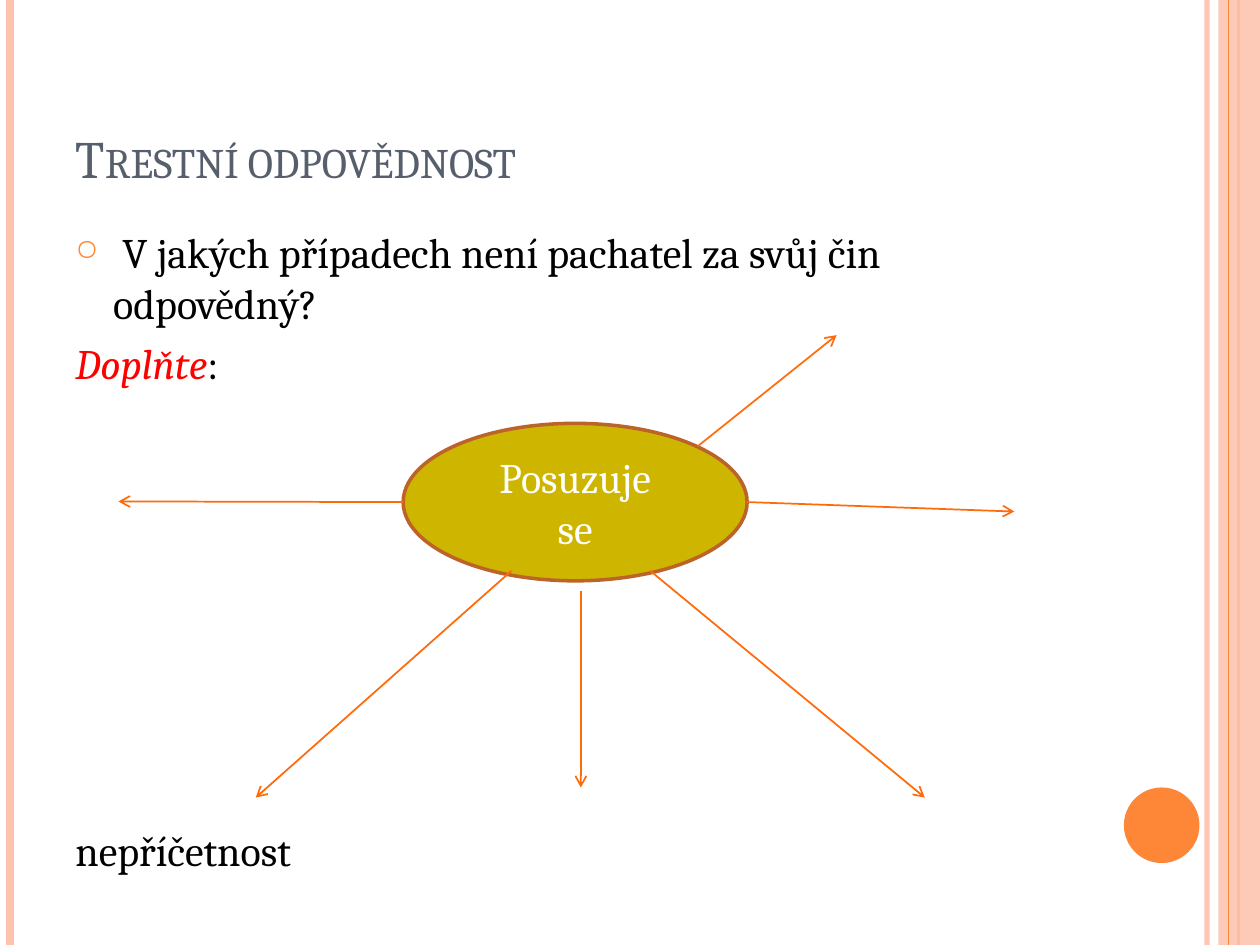
from lxml import etree
from pptx import Presentation
from pptx import util as u
from pptx.dml.color import RGBColor
from pptx.enum import shapes, text
from pptx.oxml import ns

FONT = "Cambria"
PEACH = RGBColor(0xFE, 0xC3, 0xAE)
ORANGE = RGBColor(0xFE, 0x86, 0x37)
ARROW = RGBColor(0xFF, 0x6B, 0x0A)
SLATE = RGBColor(0x57, 0x5F, 0x6D)
OLIVE = RGBColor(0xCE, 0xB5, 0x00)
RUST = RGBColor(0xBC, 0x63, 0x29)
RED = RGBColor(0xFF, 0, 0)
BLACK = RGBColor(0, 0, 0)
WHITE = RGBColor(0xFF, 0xFF, 0xFF)


def assign(target, values):
    """Set each attribute of the target from a dict."""
    for name, value in values.items():
        setattr(target, name, value)


def add_child(parent, tag, **attributes):
    """Append a DrawingML element with the given attributes."""
    return etree.SubElement(parent, ns.qn(tag), attributes)


def add_span(para, words, size, color, **values):
    """Add a formatted run to a paragraph."""
    span = para.add_run()
    span.text = words
    assign(span.font, {"name": FONT, "size": u.Pt(size), **values})
    span.font.color.rgb = color
    return span


def set_alpha(fill, percent):
    """Make a solid fill partly transparent."""
    color = fill._xPr.find(ns.qn("a:solidFill"))[0]
    add_child(color, "a:alpha", val=str(percent * 1000))


def add_line(page, start, end, color, width):
    """Draw a straight connector between two points in inches."""
    points = [u.Inches(value) for value in (*start, *end)]
    line = page.shapes.add_connector(shapes.MSO_CONNECTOR.STRAIGHT, *points)
    line.line.color.rgb = color
    line.line.width = u.Pt(width)
    add_child(line._element.spPr, "a:effectLst")
    return line


def add_solid(page, kind, box, color):
    """Draw a preset shape with a plain fill and no outline."""
    solid = page.shapes.add_shape(kind, *map(u.Inches, box))
    solid.shadow.inherit = False
    solid.fill.solid()
    solid.fill.fore_color.rgb = color
    solid.line.fill.background()
    return solid


def add_frame(page, box):
    """Draw the vertical stripes and the round accent inside the box."""
    left, top, width, height = box
    right, bottom = left + width, top + height

    def stripe(x, color, weight):
        return add_line(page, (x, top), (x, bottom), color, weight)

    set_alpha(stripe(right - 0.42, PEACH, 3).line.fill, 93)
    stripe(left + 0.08, PEACH, 4.5)
    stripe(right - 0.17, ORANGE, 1.5)
    band = add_solid(page, shapes.MSO_SHAPE.RECTANGLE,
                     (right - 0.33, top, 0.33, height), PEACH)
    set_alpha(band.fill, 87)
    stripe(right - 0.25, ORANGE, 0.75)
    add_solid(page, shapes.MSO_SHAPE.OVAL,
              (right - 1.08, bottom - 1.25, 0.6, 0.6), ORANGE)


def add_title(page, box):
    """Place and format the title placeholder."""
    title = page.shapes.title
    assign(title, dict(zip(("left", "top", "width", "height"), map(u.Inches, box))))
    assign(title.text_frame, {"vertical_anchor": text.MSO_ANCHOR.BOTTOM,
                              "word_wrap": True,
                              "auto_size": text.MSO_AUTO_SIZE.NONE})
    para = title.text_frame.paragraphs[0]
    para.alignment = text.PP_ALIGN.LEFT
    span = add_span(para, "Trestní odpovědnost", 30, SLATE)
    span.font._element.set("cap", "small")


def add_body(page, box):
    """Write the question, the prompt and the given answer."""
    frame = page.shapes.add_textbox(*map(u.Inches, box)).text_frame
    frame.word_wrap = True
    question, prompt, answer = (frame.paragraphs[0], frame.add_paragraph(),
                                frame.add_paragraph())
    for para, gap in ((question, 6), (prompt, 6), (answer, 249)):
        para.space_before = u.Pt(gap)
        props = para._p.get_or_add_pPr()
        props.set("marL", str(u.Inches(0.3)))
        props.set("indent", str(u.Inches(-0.3)))
        if para is question:
            add_child(add_child(props, "a:buClr"), "a:srgbClr", val=str(ORANGE))
            add_child(props, "a:buSzPct", val="70000")
            add_child(props, "a:buChar", char="○")
        else:
            add_child(props, "a:buNone")
    add_span(question, " V jakých případech není pachatel za svůj čin odpovědný?",
             24, BLACK)
    add_span(prompt, "Doplňte", 24, RED, italic=True)
    add_span(prompt, ":", 24, BLACK)
    add_span(answer, "nepříčetnost", 24, BLACK)


def add_diagram(page, box):
    """Draw the central oval and the arrows that leave it."""
    left, top, width, height = box
    right, middle = left + width, top + height / 2
    oval = add_solid(page, shapes.MSO_SHAPE.OVAL, box, OLIVE)
    oval.line.color.rgb = RUST
    oval.line.width = u.Pt(2)
    frame = oval.text_frame
    assign(frame, {"word_wrap": True, "vertical_anchor": text.MSO_ANCHOR.MIDDLE})
    for para, words in ((frame.paragraphs[0], "Posuzuje"),
                        (frame.add_paragraph(), "se")):
        para.alignment = text.PP_ALIGN.CENTER
        add_span(para, words, 24, WHITE)

    arrows = (
        ((left + 0.86, top + 1.17), (2.03, 6.33)),
        ((left + 1.41, top + 1.33), (4.61, 6.25)),
        ((left + 1.96, top + 1.17), (7.34, 6.33)),
        ((right, middle), (8.05, 4.06)),
        ((left, middle), (0.94, 3.98)),
        ((left + 2.34, top + 0.18), (6.64, 2.66)),
    )
    for start, end in arrows:
        arrow = add_line(page, start, end, ARROW, 1)
        add_child(arrow.line._get_or_add_ln(), "a:tailEnd", type="arrow")


def main():
    """Build the slide and save the deck."""
    deck = Presentation()
    deck.slide_width, deck.slide_height = u.Inches(10), u.Inches(7.5)
    page = deck.slides.add_slide(deck.slide_layouts[5])
    add_frame(page, (0, 0, 10, 7.5))
    add_title(page, (0.5, 0.3, 8.17, 1.25))
    add_body(page, (0.5, 1.75, 8.17, 5.33))
    add_diagram(page, (3.2, 3.36, 2.73, 1.25))
    deck.save("out.pptx")


if __name__ == "__main__":
    main()
